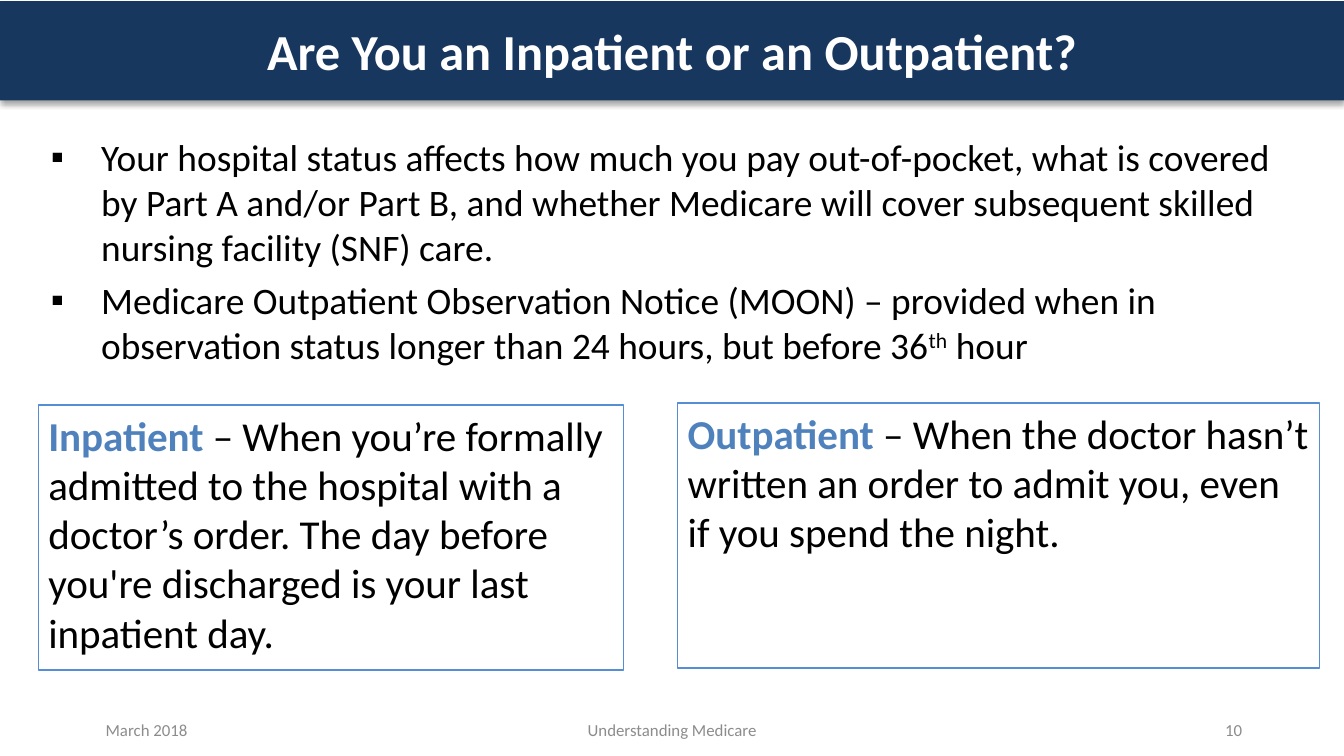
from lxml import etree
from pptx import Presentation
from pptx.dml.color import RGBColor
from pptx.enum.shapes import MSO_SHAPE
from pptx.enum.text import MSO_ANCHOR, MSO_AUTO_SIZE, PP_ALIGN
from pptx.oxml import parse_xml
from pptx.oxml.ns import nsdecls, qn
from pptx.util import Pt

NAVY = RGBColor(0x17, 0x37, 0x5E)
BLUE = RGBColor(0x4F, 0x81, 0xBD)
BORDER = RGBColor(0x55, 0x8E, 0xD5)
GRAY = RGBColor(0x8C, 0x8C, 0x8C)
BLACK = RGBColor(0, 0, 0)
WHITE = RGBColor(0xFF, 0xFF, 0xFF)


def place(sp, left, top, width, height):
    sp.left, sp.top, sp.width, sp.height = Pt(left), Pt(top), Pt(width), Pt(height)


def add_run(p, text, size, color, bold=False):
    r = p.add_run()
    r.text = text
    r.font.name = "Calibri"
    r.font.size = Pt(size)
    r.font.bold = bold
    r.font.color.rgb = color
    return r


prs = Presentation()
prs.slide_width = Pt(720)
prs.slide_height = Pt(405)
s = prs.slides.add_slide(prs.slide_layouts[1])

banner = s.shapes.add_shape(MSO_SHAPE.RECTANGLE, Pt(0), Pt(0.6), Pt(720), Pt(53.3))
banner.fill.solid()
banner.fill.fore_color.rgb = NAVY
banner.line.fill.background()
banner._element.spPr.append(parse_xml(
    f'<a:effectLst {nsdecls("a")}>'
    '<a:outerShdw blurRad="39370" dist="22860" dir="5400000" rotWithShape="0">'
    '<a:srgbClr val="000000"><a:alpha val="35000"/></a:srgbClr>'
    '</a:outerShdw></a:effectLst>'))
s.shapes._spTree.insert(2, banner._element)

title = s.shapes.title
place(title, 49.5, 0, 621, 54)
tf = title.text_frame
tf.auto_size = MSO_AUTO_SIZE.NONE
tf.vertical_anchor = MSO_ANCHOR.MIDDLE
p = tf.paragraphs[0]
p.alignment = PP_ALIGN.CENTER
add_run(p, "Are You an Inpatient or an Outpatient?", 27, WHITE, True)

bullets = [
    ["Your hospital status affects how much you pay out-of-pocket, what is covered "
     "by Part A and/or Part B, and whether Medicare will cover subsequent skilled "
     "nursing facility (SNF) care."],
    ["Medicare Outpatient Observation Notice (MOON) – provided when in "
     "observation status longer than 24 hours, but before 36", "th", " hour"],
]
body = s.placeholders[1]
place(body, 20, 68.5, 687, 145.5)
tf = body.text_frame
tf.auto_size = MSO_AUTO_SIZE.NONE
for i, parts in enumerate(bullets):
    p = tf.paragraphs[0] if i == 0 else tf.add_paragraph()
    pPr = p._p.get_or_add_pPr()
    pPr.set("marL", str(Pt(27)))
    pPr.set("indent", str(Pt(-27)))
    etree.SubElement(pPr, qn("a:buChar")).set("char", "▪")
    p.space_before = Pt(4.5 if i else 0)
    for text in parts:
        r = add_run(p, text, 20, BLACK)
        if text == "th":
            r.font._element.set("baseline", "30000")

definitions = [
    (20.5, 217, 313.5, "Inpatient ",
     "– When you’re formally admitted to the hospital with a doctor’s order. "
     "The day before you're discharged is your last inpatient day."),
    (363, 216, 344, "Outpatient ",
     "– When the doctor hasn’t written an order to admit you, even if you "
     "spend the night."),
]
for left, top, width, term, meaning in definitions:
    sp = s.shapes.add_shape(MSO_SHAPE.RECTANGLE, Pt(left), Pt(top), Pt(width), Pt(142))
    sp.shadow.inherit = False
    sp.fill.background()
    sp.line.color.rgb = BORDER
    sp.line.width = Pt(0.75)
    tf = sp.text_frame
    tf.word_wrap = True
    tf.vertical_anchor = MSO_ANCHOR.TOP
    tf.margin_left = tf.margin_right = Pt(5.4)
    tf.margin_top = tf.margin_bottom = Pt(2.7)
    p = tf.paragraphs[0]
    p.alignment = PP_ALIGN.LEFT
    add_run(p, term, 22, BLUE, True)
    add_run(p, meaning, 22, BLACK)

footers = [
    (49.5, 162, "March 2018", PP_ALIGN.LEFT),
    (238.5, 243, "Understanding Medicare", PP_ALIGN.CENTER),
    (510.5, 162, "10", PP_ALIGN.RIGHT),
]
for left, width, text, align in footers:
    sp = s.shapes.add_textbox(Pt(left), Pt(380.5), Pt(width), Pt(21.5))
    tf = sp.text_frame
    tf.word_wrap = True
    tf.vertical_anchor = MSO_ANCHOR.MIDDLE
    p = tf.paragraphs[0]
    p.alignment = align
    add_run(p, text, 9, GRAY)

prs.save("out.pptx")
